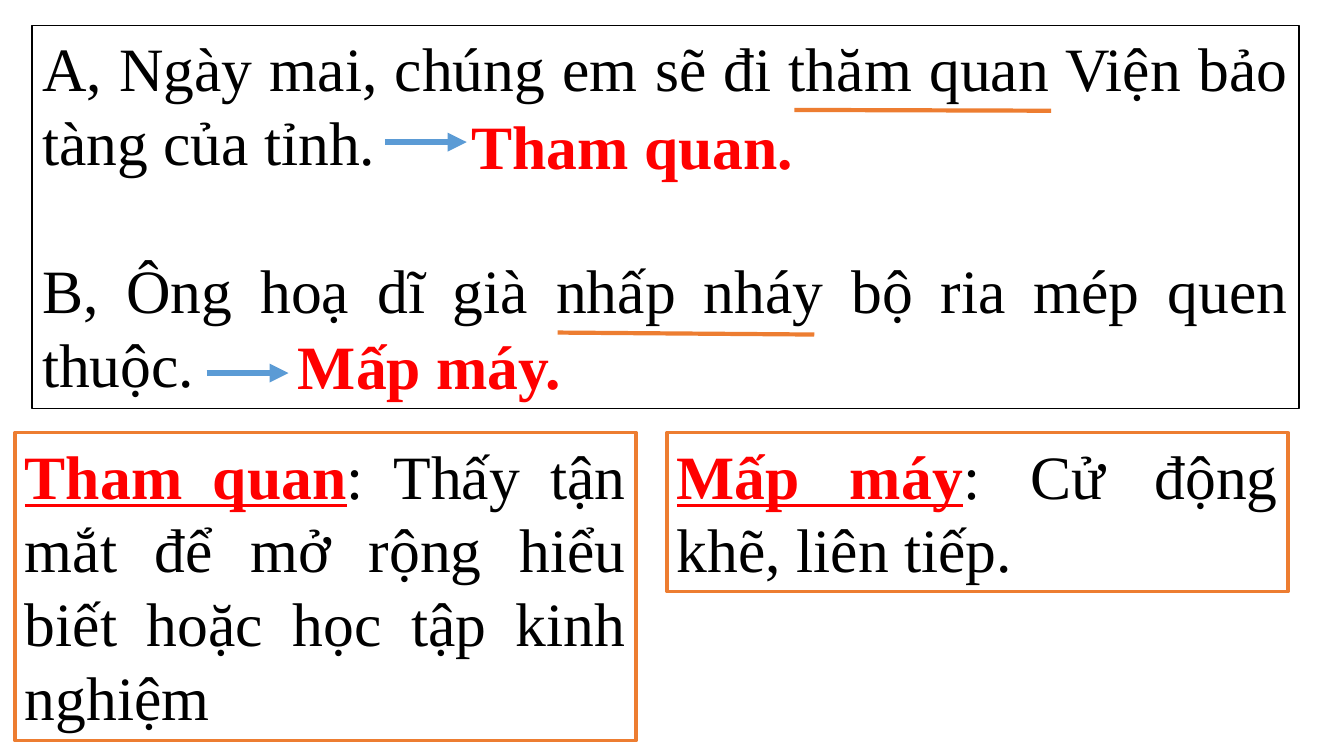
from lxml import etree
from pptx import Presentation
from pptx.dml.color import RGBColor
from pptx.enum.shapes import MSO_CONNECTOR, MSO_SHAPE
from pptx.enum.text import MSO_ANCHOR, PP_ALIGN
from pptx.oxml.ns import qn
from pptx.util import Cm, Pt

RECTANGLE = MSO_SHAPE.RECTANGLE
STRAIGHT = MSO_CONNECTOR.STRAIGHT
TOP = MSO_ANCHOR.TOP
LEFT, JUSTIFY = PP_ALIGN.LEFT, PP_ALIGN.JUSTIFY
COLORS = {
    "paper": "FFFFFF",
    "ink": "000000",
    "answer": "FF0000",
    "accent": "ED7D31",
    "arrow": "5B9BD5",
}


def write_paragraph(paragraph, parts, align):
    paragraph.alignment = align
    for text, color, bold, underline in parts:
        run = paragraph.add_run()
        run.text = text
        run.font.name = "Times New Roman"
        run.font.size = Pt(44)
        run.font.bold = bold
        run.font.underline = underline
        run.font.color.rgb = RGBColor.from_string(COLORS[color])


def draw_line(start, end, color, width):
    line = slide.shapes.add_connector(STRAIGHT, *map(Cm, start + end))
    line.line.color.rgb = RGBColor.from_string(COLORS[color])
    line.line.width = Pt(width)
    properties = line._element.spPr
    etree.SubElement(properties, qn("a:effectLst"))
    return properties.find(qn("a:ln"))


prs = Presentation()
prs.slide_width, prs.slide_height = Cm(33.87), Cm(19.05)
slide = prs.slides.add_slide(prs.slide_layouts[6])

sentences = [
    [("A, Ngày mai, chúng em sẽ đi thăm quan Viện bảo tàng của tỉnh.", "ink", False, False)],
    [("B, Ông hoạ dĩ già nhấp nháy bộ ria mép quen thuộc.", "ink", False, False)],
]
tham_quan = [[
    ("Tham quan", "answer", True, True),
    (": Thấy tận mắt để mở rộng hiểu biết hoặc học tập kinh nghiệm", "ink", False, False),
]]
map_may = [[
    ("Mấp máy", "answer", True, True),
    (": Cử động khẽ, liên tiếp.", "ink", False, False),
]]

panels = [
    (0.81, 0.64, 31.93, 9.65, "ink", 1, sentences),
    (0.38, 10.9, 15.65, 7.77, "accent", 2.25, tham_quan),
    (16.81, 10.9, 15.65, 4.01, "accent", 2.25, map_may),
]
for left, top, width, height, border, weight, paragraphs in panels:
    panel = slide.shapes.add_shape(RECTANGLE, Cm(left), Cm(top), Cm(width), Cm(height))
    panel.shadow.inherit = False
    panel.fill.solid()
    panel.fill.fore_color.rgb = RGBColor.from_string(COLORS["paper"])
    panel.line.color.rgb = RGBColor.from_string(COLORS[border])
    panel.line.width = Pt(weight)
    frame = panel.text_frame
    frame.word_wrap = True
    frame.vertical_anchor = TOP
    for index, parts in enumerate(paragraphs):
        paragraph = frame.add_paragraph() if index else frame.paragraphs[0]
        if index:
            paragraph.space_before = Pt(53)
        write_paragraph(paragraph, parts, JUSTIFY)

for start, end in [((20.02, 2.77), (26.49, 2.79)), ((14.05, 8.38), (20.52, 8.43))]:
    draw_line(start, end, "accent", 3)

corrections = [
    ("Tham quan.", 11.63, 2.59, 9.7, 3.58),
    ("Mấp máy.", 7.26, 8.15, 5.21, 9.4),
]
for word, left, top, arrow_left, arrow_y in corrections:
    stroke = draw_line((arrow_left, arrow_y), (arrow_left + 2.06, arrow_y), "arrow", 4.5)
    etree.SubElement(stroke, qn("a:tailEnd"), type="triangle")
    answer = slide.shapes.add_textbox(Cm(left), Cm(top), Cm(9.04), Cm(2.13))
    answer.text_frame.word_wrap = True
    write_paragraph(answer.text_frame.paragraphs[0], [(word, "answer", True, False)], LEFT)

prs.save("out.pptx")
